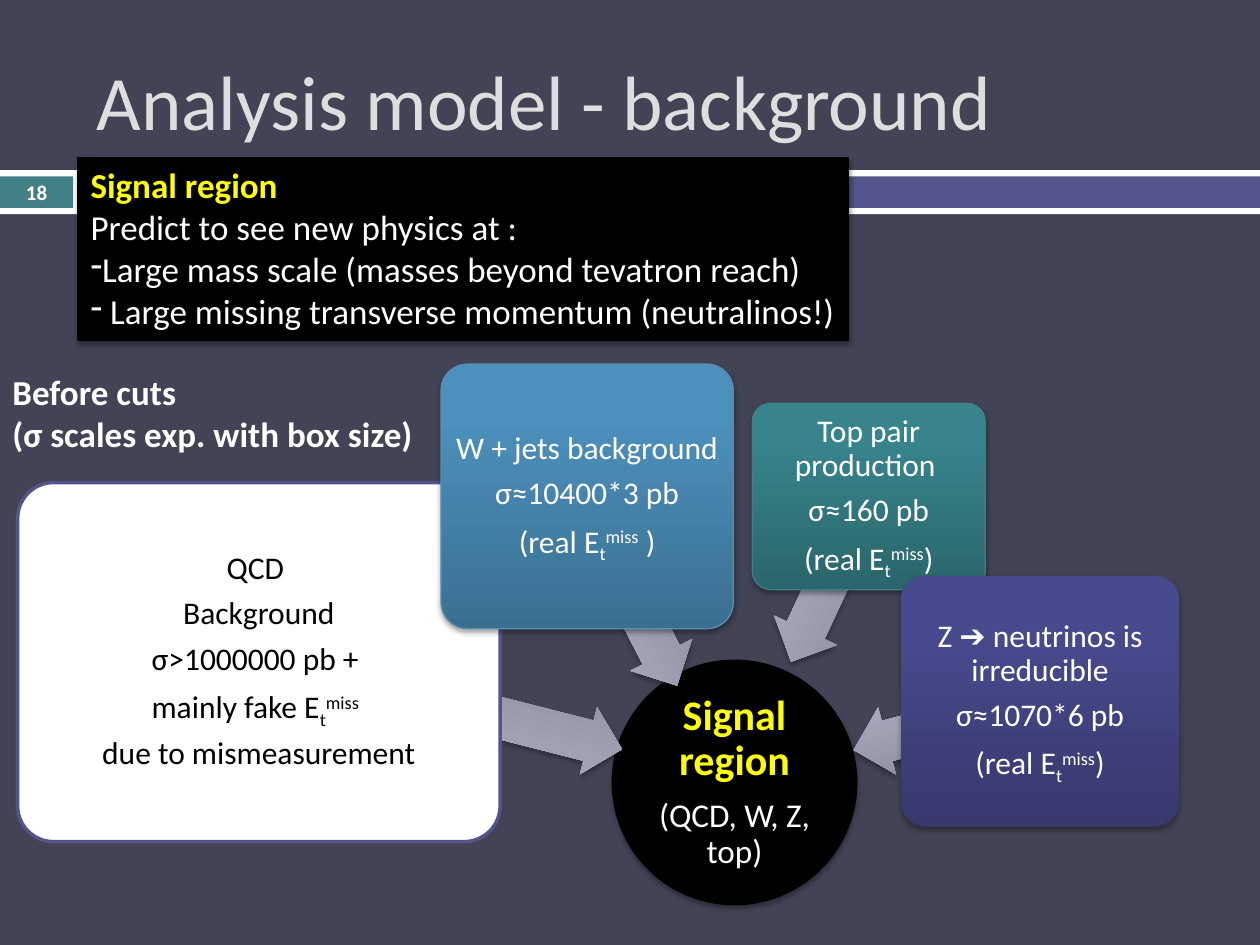
"""Build the slide on the background analysis model around the signal region."""
from copy import deepcopy
from dataclasses import dataclass

from lxml import etree
from pptx import Presentation
from pptx import util as u
from pptx.dml.color import RGBColor
from pptx.enum import shapes, text
from pptx.oxml import ns


@dataclass(frozen=True)
class Theme:
    font: str = "Calibri"
    page: str = "424456"
    title: str = "DEDEDE"
    white: str = "FFFFFF"
    black: str = "000000"
    yellow: str = "FFFF00"
    teal: str = "438086"
    violet: str = "53548A"
    arrow: tuple = ("848494", "ABACC0", "ACACC2")
    w_jets: tuple = ("3B6F91", "4C90BC", "4A91BF")
    top_pair: tuple = ("2A666B", "37848C", "36868E")
    z_boson: tuple = ("38396D", "484A8E", "474990")
    w_edge: str = "588FB3"
    top_edge: str = "407F85"
    title_size: float = 44
    number_size: float = 12
    region_size: float = 24
    note_size: float = 20
    mix_size: float = 19
    body_size: float = 18


theme = Theme()
kinds = shapes.MSO_SHAPE
center, left = text.PP_ALIGN.CENTER, text.PP_ALIGN.LEFT

deck = Presentation()
deck.slide_width, deck.slide_height = u.Inches(10), u.Inches(7.5)
slide = deck.slides.add_slide(deck.slide_layouts[6])
slide.background.fill.solid()
slide.background.fill.fore_color.rgb = RGBColor.from_string(theme.page)


def draw(kind, place, fill, edge=None, edge_width=0.75, shadow=True):
    shape = slide.shapes.add_shape(kind, *map(u.Inches, place))
    shape.shadow.inherit = False
    if isinstance(fill, tuple):
        shape.fill.gradient()
        shape.fill.gradient_angle = 90
        stop_list = shape._element.spPr.find(".//" + ns.qn("a:gsLst"))
        stop_list.append(deepcopy(stop_list[0]))
        for stop, position, color in zip(shape.fill.gradient_stops, (0, 0.8, 1), fill):
            stop.position = position
            stop.color.rgb = RGBColor.from_string(color)
    else:
        shape.fill.solid()
        shape.fill.fore_color.rgb = RGBColor.from_string(fill)
    if edge:
        shape.line.color.rgb = RGBColor.from_string(edge)
        shape.line.width = u.Pt(edge_width)
    else:
        shape.line.fill.background()
    if shadow:
        effects = shape._element.spPr.find(ns.qn("a:effectLst"))
        outer = etree.SubElement(effects, ns.qn("a:outerShdw"), blurRad="40000",
                                 dist="23000", dir="5400000", rotWithShape="0")
        color = etree.SubElement(outer, ns.qn("a:srgbClr"), val=theme.black)
        etree.SubElement(color, ns.qn("a:alpha"), val="35000")
    return shape


def write(shape, lines, align=left, inset=None, anchor=text.MSO_ANCHOR.MIDDLE,
          wrap=True, spaced=False):
    frame = shape.text_frame
    frame.word_wrap, frame.vertical_anchor = wrap, anchor
    if inset is not None:
        frame.margin_left = frame.margin_right = u.Inches(inset)
        frame.margin_top = frame.margin_bottom = u.Inches(inset)
    for index, (words, size, color, bold, bullet) in enumerate(lines):
        line = frame.paragraphs[0] if index == 0 else frame.add_paragraph()
        line.alignment = align
        if spaced:
            line.line_spacing = 0.9
            line.space_after = u.Pt(round(size * 0.35, 1))
        if bullet:
            props = line._p.get_or_add_pPr()
            props.set("marL", "0")
            props.set("indent", "0")
            etree.SubElement(props, ns.qn("a:buFontTx"))
            etree.SubElement(props, ns.qn("a:buChar"), char=bullet)
        before, energy, after = words.partition("Etmiss")
        pieces = [(before, 0), (after, 0)]
        if energy:
            pieces = [(before + "E", 0), ("t", -25000), ("miss", 30000), (after, 0)]
        for piece, baseline in pieces:
            if piece:
                run = line.add_run()
                run.text = piece
                if baseline:
                    run._r.get_or_add_rPr().set("baseline", str(baseline))
        line.font.name, line.font.size, line.font.bold = theme.font, u.Pt(size), bold
        line.font.color.rgb = RGBColor.from_string(color)


for place, color in [((0, 1.35, 10, 0.35), theme.white),
                     ((0, 1.4, 0.58, 0.25), theme.teal),
                     ((0.65, 1.4, 9.35, 0.25), theme.violet)]:
    band = draw(kinds.RECTANGLE, place, color, shadow=False)

title = slide.shapes.add_textbox(*map(u.Inches, (0.67, 0.25, 8.92, 1.08)))
write(title, [("Analysis model - background", theme.title_size, theme.title, False, None)])
number = slide.shapes.add_textbox(*map(u.Inches, (0, 1.39, 0.58, 0.27)))
write(number, [("18", theme.number_size, theme.white, True, None)], center)

region = draw(kinds.OVAL, (4.86, 5.24, 1.94, 1.94), theme.black, theme.black)
write(region, [("Signal region", theme.region_size, theme.yellow, True, None),
               ("(QCD, W, Z, top)", theme.mix_size, theme.white, False, None)],
      center, 0.02, spaced=True)

backgrounds = [
    ((2.22, 5.33, 2.76, 0.55), 194.3, (0.14, 3.83, 3.83, 2.85),
     theme.white, theme.violet, 2, theme.black,
     ["QCD ", "Background", "σ>1000000 pb + ", "mainly fake Etmiss ",
      "due to mismeasurement"]),
    ((4.28, 4.5, 1.5, 0.55), 242.7, (3.5, 2.89, 2.32, 2.1),
     theme.w_jets, theme.w_edge, 0.75, theme.white,
     ["W + jets background", "σ≈10400*3 pb", "(real Etmiss )"]),
    ((5.86, 4.32, 1.45, 0.55), 295, (5.97, 3.2, 1.85, 1.48),
     theme.top_pair, theme.top_edge, 0.75, theme.white,
     ["Top pair production ", "σ≈160 pb", "(real Etmiss)"]),
    ((6.75, 5.49, 1.45, 0.55), 345, (7.15, 4.57, 2.21, 1.99),
     theme.z_boson, None, 0, theme.white,
     ["Z ➔ neutrinos is irreducible", "σ≈1070*6 pb", "(real Etmiss)"]),
]
for arrow_place, turn, place, fill, edge, edge_width, ink, lines in backgrounds:
    arrow = draw(kinds.LEFT_ARROW, arrow_place, theme.arrow)
    arrow.adjustments[0], arrow.adjustments[1] = 0.6, 0.5
    arrow.rotation = turn
    process = draw(kinds.ROUNDED_RECTANGLE, place, fill, edge, edge_width,
                   shadow=fill != theme.white)
    process.adjustments[0] = 0.1
    write(process, [(line, theme.body_size, ink, False, None) for line in lines],
          center, 0.04, spaced=True)

prediction = draw(kinds.RECTANGLE, (0.62, 1.25, 6.11, 1.45), theme.black, theme.black)
write(prediction, [
    ("Signal region", theme.note_size, theme.yellow, True, None),
    ("Predict to see new physics at :", theme.note_size, theme.white, False, None),
    ("Large mass scale (masses beyond tevatron reach)",
     theme.note_size, theme.white, False, "-"),
    (" Large missing transverse momentum (neutralinos!)",
     theme.note_size, theme.white, False, "-"),
], anchor=text.MSO_ANCHOR.TOP, wrap=False)

scale_note = slide.shapes.add_textbox(*map(u.Inches, (0, 2.89, 3.41, 0.77)))
write(scale_note, [(line, theme.note_size, theme.white, True, None)
                   for line in ("Before cuts", "(σ scales exp. with box size)")],
      anchor=text.MSO_ANCHOR.TOP, wrap=False)

deck.save("out.pptx")
